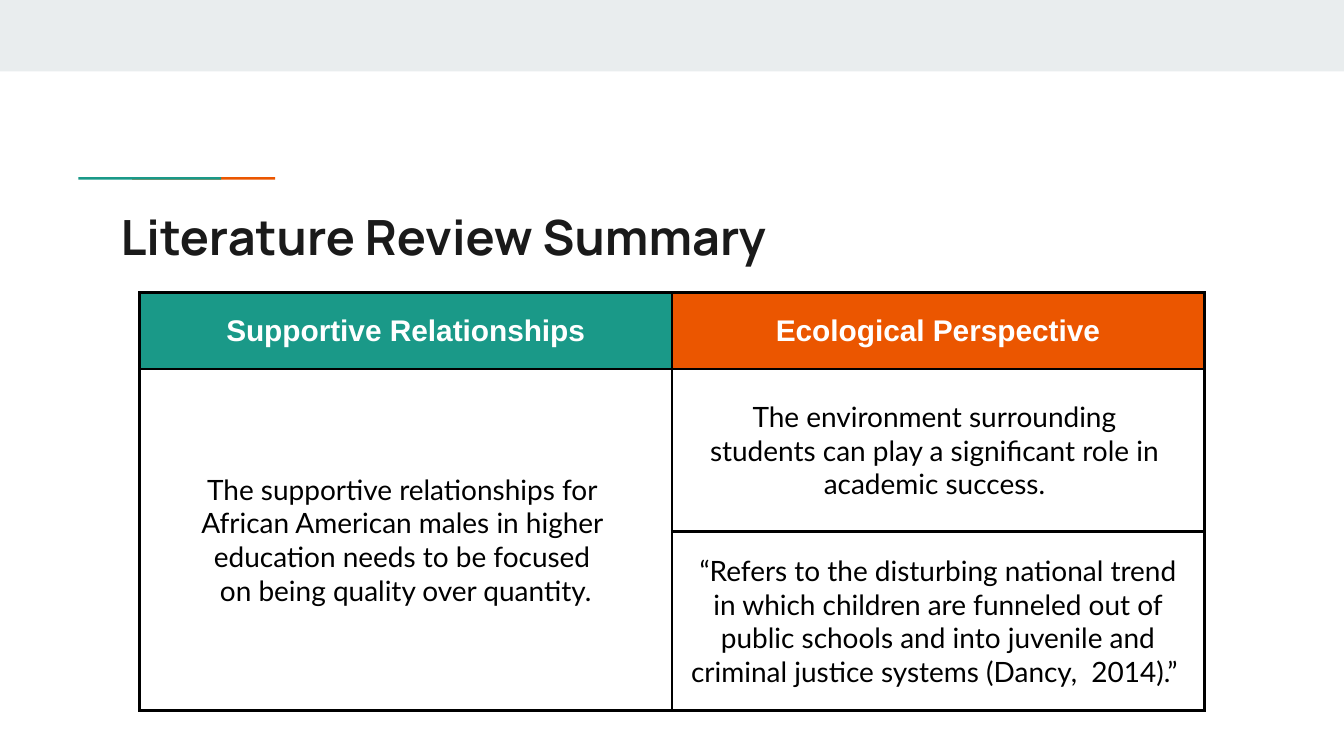
from lxml.etree import SubElement
from pptx import Presentation
from pptx.dml.color import RGBColor
from pptx.enum.shapes import MSO_SHAPE
from pptx.enum.text import MSO_ANCHOR, PP_ALIGN
from pptx.oxml.ns import qn
from pptx.util import Cm, Pt

TEAL, ORANGE, GREY = "1A9988", "EB5600", "E9EDEE"
WHITE, BLACK, INK = "FFFFFF", "000000", "1A1A1A"
INSET = Cm(0.25)

SUPPORT = "\n".join((
    "The supportive relationships for ",
    "African American males in higher ",
    "education needs to be focused ",
    "on being quality over quantity.",
))
ENVIRONMENT = "\n".join((
    "The environment surrounding ",
    "students can play a significant role in ",
    "academic success. ",
))
QUOTE = (
    "“Refers to the disturbing national trend in which children are funneled "
    "out of public schools and into juvenile and criminal justice systems "
    "(Dancy,  2014).” "
)


def color(value):
    return RGBColor.from_string(value)


def add_bar(page, left, top, width, height, fill, rotation=0):
    bar = page.shapes.add_shape(
        MSO_SHAPE.RECTANGLE, Cm(left), Cm(top), Cm(width), Cm(height))
    bar.rotation = rotation
    bar.shadow.inherit = False
    bar.fill.solid()
    bar.fill.fore_color.rgb = color(fill)
    bar.line.fill.background()


def add_accent(page):
    """Draw two overlapping upright bars, turned to lie flat."""
    thickness, length, middle = 0.05, 2.7, 3.37
    for center, fill in ((3.85, ORANGE), (2.83, TEAL)):
        add_bar(page, center - thickness / 2, middle - length / 2,
                thickness, length, fill, rotation=270)


def set_text(frame, text, font, size, ink, bold=False, align=PP_ALIGN.LEFT):
    frame.text = text
    frame.word_wrap = True
    for para in frame.paragraphs:
        para.alignment = align
        for span in para.runs:
            span.font.name = font
            span.font.size = Pt(size)
            span.font.bold = bold
            span.font.color.rgb = color(ink)


def set_insets(target):
    """Give a cell or a text frame the same margin on all sides."""
    target.margin_left = target.margin_right = INSET
    target.margin_top = target.margin_bottom = INSET


def add_title(page, text):
    box = page.shapes.add_textbox(Cm(2.03), Cm(3.66), Cm(21.36), Cm(1.5))
    set_insets(box.text_frame)
    set_text(box.text_frame, text, "Manrope", 26, INK, bold=True)


def style_cell(cell, fill):
    """Draw the four borders first, since the fill must follow them."""
    properties = cell._tc.get_or_add_tcPr()
    for side in ("a:lnL", "a:lnR", "a:lnT", "a:lnB"):
        line = SubElement(properties, qn(side), w=str(Pt(1.5)))
        solid = SubElement(line, qn("a:solidFill"))
        SubElement(solid, qn("a:srgbClr"), val=BLACK)
    if fill:
        cell.fill.solid()
        cell.fill.fore_color.rgb = color(fill)
    else:
        cell.fill.background()
    cell.vertical_anchor = MSO_ANCHOR.MIDDLE
    set_insets(cell)


def add_summary_table(page):
    widths, heights = (10.06, 10.06), (1.45, 3.07, 3.38)
    table = page.shapes.add_table(
        len(heights), len(widths), Cm(2.64), Cm(5.53),
        Cm(sum(widths)), Cm(sum(heights))).table
    for column, width in zip(table.columns, widths):
        column.width = Cm(width)
    for row, height in zip(table.rows, heights):
        row.height = Cm(height)
    table.cell(1, 0).merge(table.cell(2, 0))

    header_fills = (TEAL, ORANGE)
    rows = (
        ("Supportive Relationships", "Ecological Perspective"),
        (SUPPORT, ENVIRONMENT),
        (None, QUOTE),
    )
    for r, texts in enumerate(rows):
        for c, text in enumerate(texts):
            cell = table.cell(r, c)
            header = r == 0
            style_cell(cell, header_fills[c] if header else None)
            if text:
                font, size, ink = ("Arial", 16, WHITE) if header else ("Lato", 15, BLACK)
                set_text(cell.text_frame, text, font, size, ink, header, PP_ALIGN.CENTER)


def main():
    deck = Presentation()
    deck.slide_width, deck.slide_height = Cm(25.4), Cm(14.29)
    page = deck.slides.add_slide(deck.slide_layouts[6])
    add_bar(page, 0, 0, 25.4, 1.35, GREY)
    add_accent(page)
    add_title(page, "Literature Review Summary")
    add_summary_table(page)
    deck.save("out.pptx")


if __name__ == "__main__":
    main()
